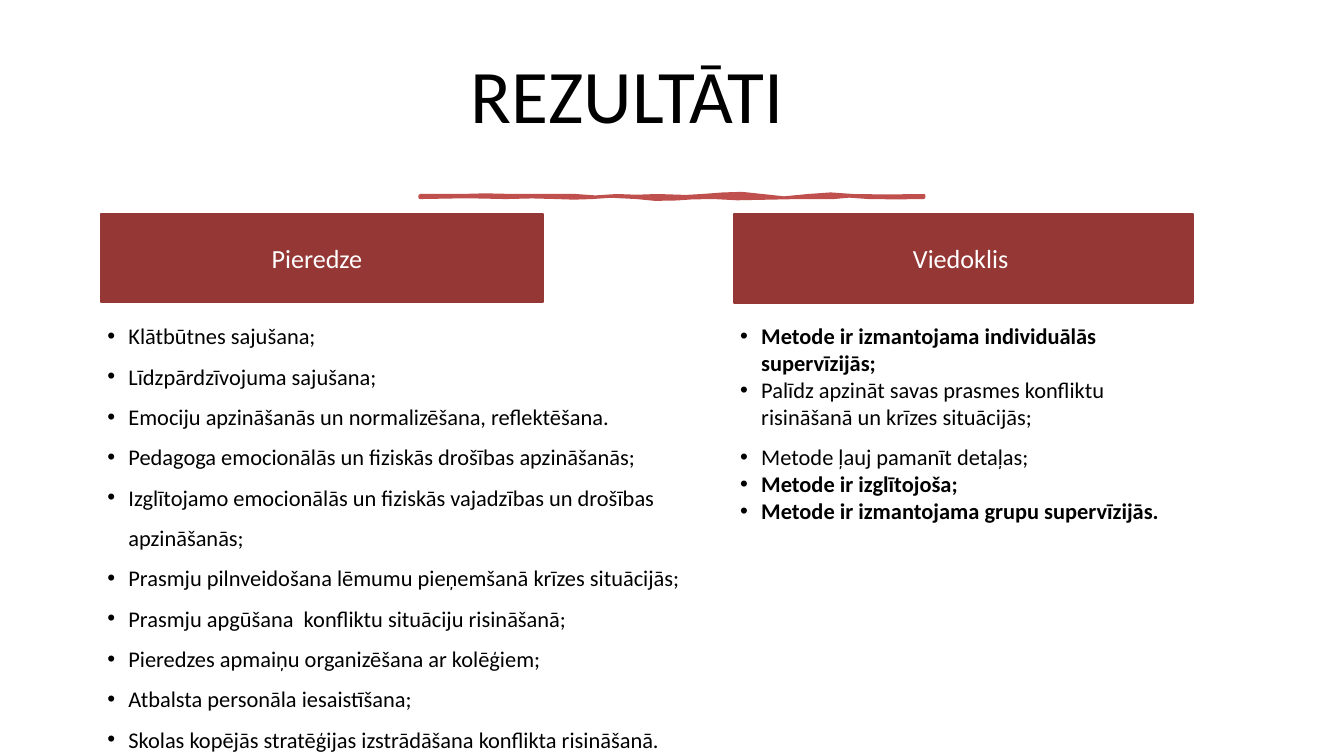
from dataclasses import dataclass

from lxml import etree
from pptx import Presentation
from pptx.dml.color import RGBColor
from pptx.enum.shapes import MSO_SHAPE
from pptx.enum.text import MSO_ANCHOR, MSO_AUTO_SIZE, PP_ALIGN
from pptx.oxml.ns import qn
from pptx.util import Pt

FONT = "Calibri"
BLACK, WHITE, RED, DARK_RED = "000000", "FFFFFF", "C0504D", "953735"
INSET = 7.2
INDENT = 22.5


@dataclass
class Box:
    left: float
    top: float
    width: float
    height: float


@dataclass
class Header:
    text: str
    box: Box
    pad: float


@dataclass
class Bullet:
    text: str
    spacing: float = 1.0
    bold: bool = False


@dataclass
class BulletList:
    box: Box
    items: list[Bullet]


HEADERS = [
    Header("Pieredze", Box(108, 229, 474, 95), 10.8),
    Header("Viedoklis", Box(786, 229.5, 492, 95), 5.4),
]

EXPERIENCE = [
    "Klātbūtnes sajušana;",
    "Līdzpārdzīvojuma sajušana;",
    "Emociju apzināšanās un normalizēšana, reflektēšana.",
    "Pedagoga emocionālās un fiziskās drošības apzināšanās;",
    "Izglītojamo emocionālās un fiziskās vajadzības un drošības apzināšanās;",
    "Prasmju pilnveidošana lēmumu pieņemšanā krīzes situācijās;",
    "Prasmju apgūšana  konfliktu situāciju risināšanā;",
    "Pieredzes apmaiņu organizēšana ar kolēģiem;",
    "Atbalsta personāla iesaistīšana;",
    "Skolas kopējās stratēģijas izstrādāšana konflikta risināšanā.",
]

LISTS = [
    BulletList(Box(108, 327.5, 642, 533), [Bullet(t, 1.5) for t in EXPERIENCE]),
    BulletList(Box(786, 342, 492, 247), [
        Bullet("Metode ir izmantojama individuālās supervīzijās;", bold=True),
        Bullet("Palīdz apzināt savas prasmes konfliktu risināšanā un krīzes situācijās;"),
        Bullet("Metode ļauj pamanīt detaļas;", 1.5),
        Bullet("Metode ir izglītojoša;", bold=True),
        Bullet("Metode ir izmantojama grupu supervīzijās.", bold=True),
    ]),
]

BRUSH_OUTLINE = [
    (450, 209.5), (475, 209.4), (493, 209.5), (520, 208.8), (552, 209.5),
    (617, 209.5), (638, 211), (661, 209.5), (682, 210.3), (704, 209.5),
    (735, 210.5), (752, 209.5), (775, 207.8), (795, 207.2), (817, 209.5),
    (840, 212), (866, 209.5), (890, 207.8), (914, 209.5), (950, 210),
    (990, 209.5), (990, 211.7), (960, 212), (931, 211.7), (910, 210.2),
    (893, 211.7), (855, 211.7), (825, 212.3), (790, 213), (765, 211.7),
    (742, 212), (725, 213.2), (702, 213.6), (682, 211.7), (655, 210.3),
    (634, 211.7), (615, 212.3), (596, 211.7), (570, 211), (542, 211.7),
    (500, 210.8), (450, 211.7),
]


def rgb(color: str) -> RGBColor:
    return RGBColor.from_string(color)


def lengths(box: Box) -> list[Pt]:
    return [Pt(v) for v in (box.left, box.top, box.width, box.height)]


def paint(sp, fill: str, line_width: float) -> None:
    sp.shadow.inherit = False
    sp.fill.solid()
    sp.fill.fore_color.rgb = rgb(fill)
    sp.line.color.rgb = rgb(fill)
    sp.line.width = Pt(line_width)


def add_run(p, text: str, size: float, color: str, bold: bool = False) -> None:
    r = p.add_run()
    r.text = text
    r.font.name = FONT
    r.font.size = Pt(size)
    r.font.bold = bold
    r.font.color.rgb = rgb(color)


def add_bullet_mark(p) -> None:
    pPr = p._p.get_or_add_pPr()
    pPr.set("marL", str(Pt(INDENT)))
    pPr.set("indent", str(-Pt(INDENT)))
    etree.SubElement(pPr, qn("a:buFont")).set("typeface", "Arial")
    etree.SubElement(pPr, qn("a:buChar")).set("char", "•")


def center_text(tf, pad: float):
    tf.word_wrap = True
    tf.auto_size = MSO_AUTO_SIZE.NONE
    tf.vertical_anchor = MSO_ANCHOR.MIDDLE
    tf.margin_right = Pt(INSET + pad)
    p = tf.paragraphs[0]
    p.alignment = PP_ALIGN.CENTER
    return p


def set_title(s, text: str, box: Box) -> None:
    title = s.shapes.title
    title.left, title.top, title.width, title.height = lengths(box)
    p = center_text(title.text_frame, 18)
    p.line_spacing = 0.9
    p.space_after = Pt(6)
    add_run(p, text, 81, BLACK)


def draw_brush_line(s, outline: list[tuple[float, float]]) -> None:
    points = [(Pt(x), Pt(y)) for x, y in outline]
    builder = s.shapes.build_freeform(*points[0])
    builder.add_line_segments(points[1:], close=True)
    paint(builder.convert_to_shape(), RED, 3.25)


def draw_header(s, header: Header) -> None:
    sp = s.shapes.add_shape(MSO_SHAPE.RECTANGLE, *lengths(header.box))
    paint(sp, DARK_RED, 2)
    add_run(center_text(sp.text_frame, header.pad), header.text, 28, WHITE)


def draw_list(s, bullets: BulletList) -> None:
    tf = s.shapes.add_textbox(*lengths(bullets.box)).text_frame
    tf.word_wrap = True
    tf.auto_size = MSO_AUTO_SIZE.SHAPE_TO_FIT_TEXT
    for i, item in enumerate(bullets.items):
        p = tf.add_paragraph() if i else tf.paragraphs[0]
        p.line_spacing = item.spacing
        add_bullet_mark(p)
        add_run(p, item.text, 24, BLACK, item.bold)


def main() -> None:
    prs = Presentation()
    prs.slide_width, prs.slide_height = Pt(1440), Pt(810)
    s = prs.slides.add_slide(prs.slide_layouts[5])
    set_title(s, "REZULTĀTI", Box(234, 43, 894, 126))
    draw_brush_line(s, BRUSH_OUTLINE)
    for header in HEADERS:
        draw_header(s, header)
    for bullets in LISTS:
        draw_list(s, bullets)
    prs.save("out.pptx")


if __name__ == "__main__":
    main()
